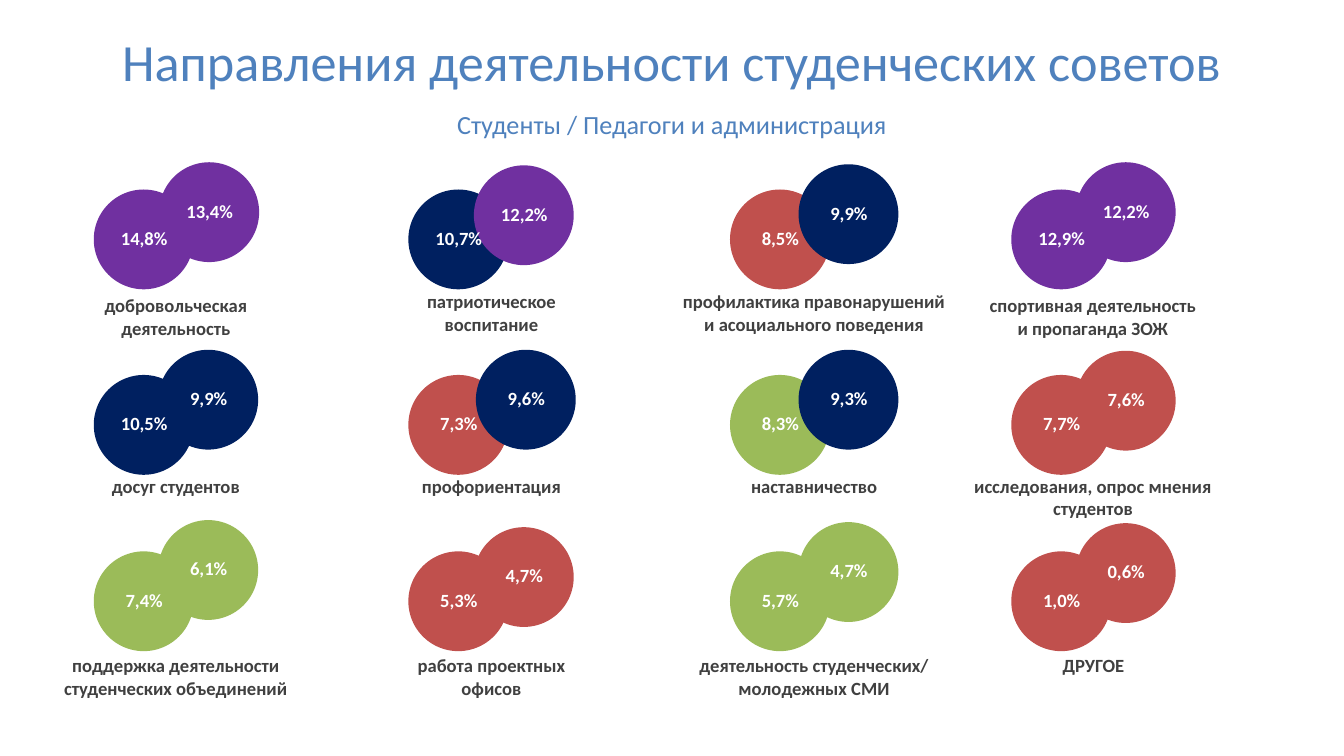
from pptx import Presentation
from pptx.dml.color import RGBColor
from pptx.enum.shapes import MSO_SHAPE
from pptx.enum.text import MSO_ANCHOR, PP_ALIGN
from pptx.util import Emu, Pt

CENTER = PP_ALIGN.CENTER
MIDDLE = MSO_ANCHOR.MIDDLE
TOP = MSO_ANCHOR.TOP
OVAL = MSO_SHAPE.OVAL

PX = 9144
BLUE, GRAY, WHITE = "4F81BD", "404040", "FFFFFF"
PURPLE, NAVY, RED, GREEN = "7030A0", "002060", "C0504D", "9BBB59"
DIAMETER = 99


def color(value):
    return RGBColor.from_string(value)


def add_text(left, top, width, height, lines, size, ink, bold=False, anchor=TOP):
    box = page.shapes.add_textbox(*(Emu(n * PX) for n in (left, top, width, height)))
    frame = box.text_frame
    frame.word_wrap = True
    frame.vertical_anchor = anchor
    for index, line in enumerate(lines.split("\n")):
        para = frame.paragraphs[0] if index == 0 else frame.add_paragraph()
        para.alignment = CENTER
        span = para.add_run()
        span.text = line
        span.font.color.rgb = color(ink)
        for name, value in {"name": "Calibri", "size": Pt(size), "bold": bold}.items():
            setattr(span.font, name, value)


deck = Presentation()
deck.slide_width = Emu(1333 * PX)
deck.slide_height = Emu(750 * PX)
page = deck.slides.add_slide(deck.slide_layouts[6])

add_text(0, 18, 1333, 84, "Направления деятельности студенческих советов", 37.3, BLUE, anchor=MIDDLE)
add_text(0, 102, 1333, 42, "Студенты / Педагоги и администрация", 18.7, BLUE, anchor=MIDDLE)

column_lefts = [93, 405, 724, 1003]
row_tops = [188, 372, 547]

# students: value, fill; staff: value, fill, dx, dy; caption: text, left, top, width
directions = [
    [
        (("14,8%", PURPLE), ("13,4%", PURPLE, 65, -27), ("добровольческая деятельность", 77, 287, 195)),
        (("10,7%", NAVY), ("12,2%", PURPLE, 65, -24), ("патриотическое воспитание", 390, 283, 195)),
        (("8,5%", RED), ("9,9%", NAVY, 68, -25),
         ("профилактика правонарушений и асоциального поведения", 664, 283, 287)),
        (("12,9%", PURPLE), ("12,2%", PURPLE, 64, -27),
         ("спортивная деятельность и пропаганда ЗОЖ", 968, 287, 232)),
    ],
    [
        (("10,5%", NAVY), ("9,9%", NAVY, 64, -25), ("досуг студентов", 77, 466, 195)),
        (("7,3%", RED), ("9,6%", NAVY, 67, -25), ("профориентация", 390, 466, 195)),
        (("8,3%", GREEN), ("9,3%", NAVY, 68, -25), ("наставничество", 710, 466, 195)),
        (("7,7%", RED), ("7,6%", RED, 64, -24), ("исследования, опрос мнения студентов", 942, 466, 284)),
    ],
    [
        (("7,4%", GREEN), ("6,1%", GREEN, 64, -31),
         ("поддержка деятельности студенческих объединений", 21, 644, 307)),
        (("5,3%", RED), ("4,7%", RED, 65, -24), ("работа проектных офисов", 390, 644, 195)),
        (("5,7%", GREEN), ("4,7%", GREEN, 68, -29), ("деятельность студенческих/\nмолодежных СМИ", 661, 644, 293)),
        (("1,0%", RED), ("0,6%", RED, 64, -28), ("ДРУГОЕ", 987, 644, 195)),
    ],
]

for row_top, row in zip(row_tops, directions):
    for column_left, (students, staff, caption) in zip(column_lefts, row):
        text, left, top, width = caption
        add_text(left, top, width, 55 if " " in text and text != "досуг студентов" else 33, text, 13.3, GRAY, True)
        value, fill, dx, dy = staff
        circles = [
            (*students, column_left, row_top),
            (value, fill, column_left + dx, row_top + dy),
        ]
        for value, fill, left, top in circles:
            circle = page.shapes.add_shape(OVAL, *(Emu(n * PX) for n in (left, top, DIAMETER, DIAMETER)))
            circle.shadow.inherit = False
            circle.fill.solid()
            circle.fill.fore_color.rgb = color(fill)
            circle.line.fill.background()
        for value, fill, left, top in circles:
            add_text(left + 4, top + 32, 92, 33, value, 13.3, WHITE, True)

deck.save("out.pptx")
